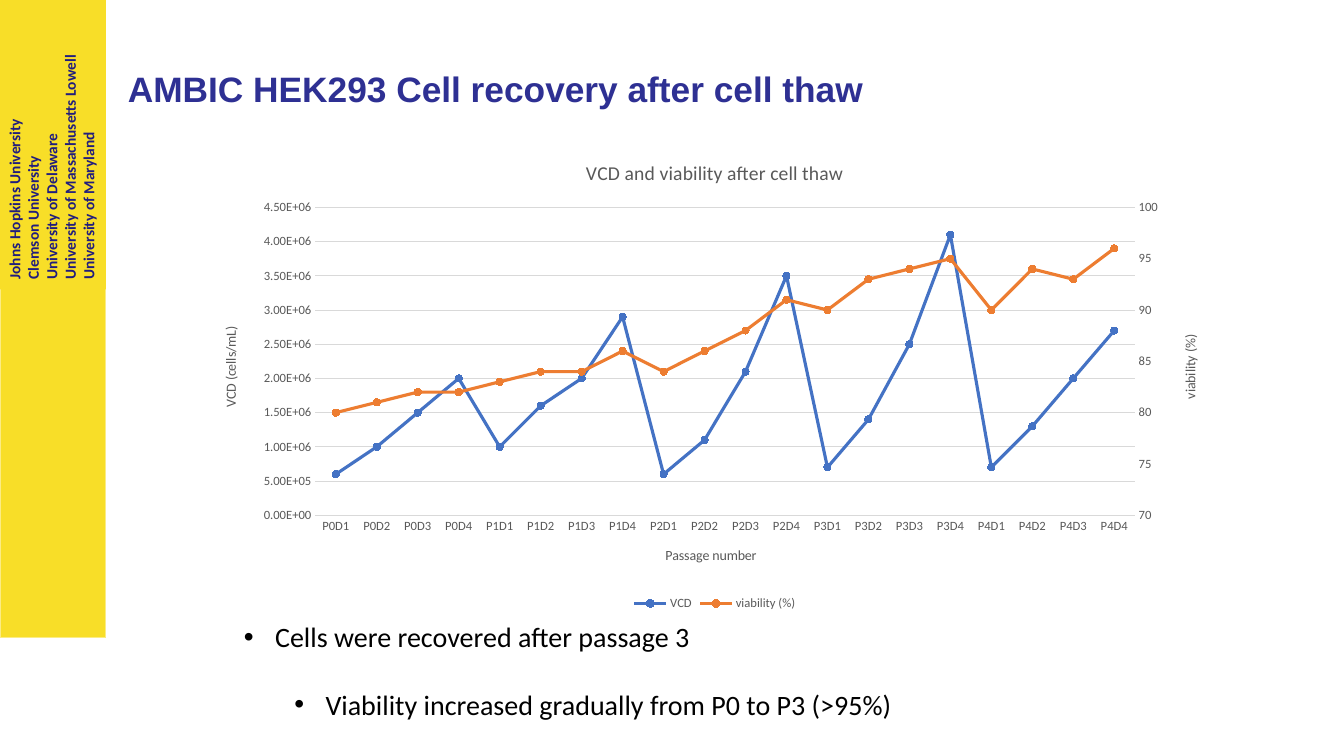
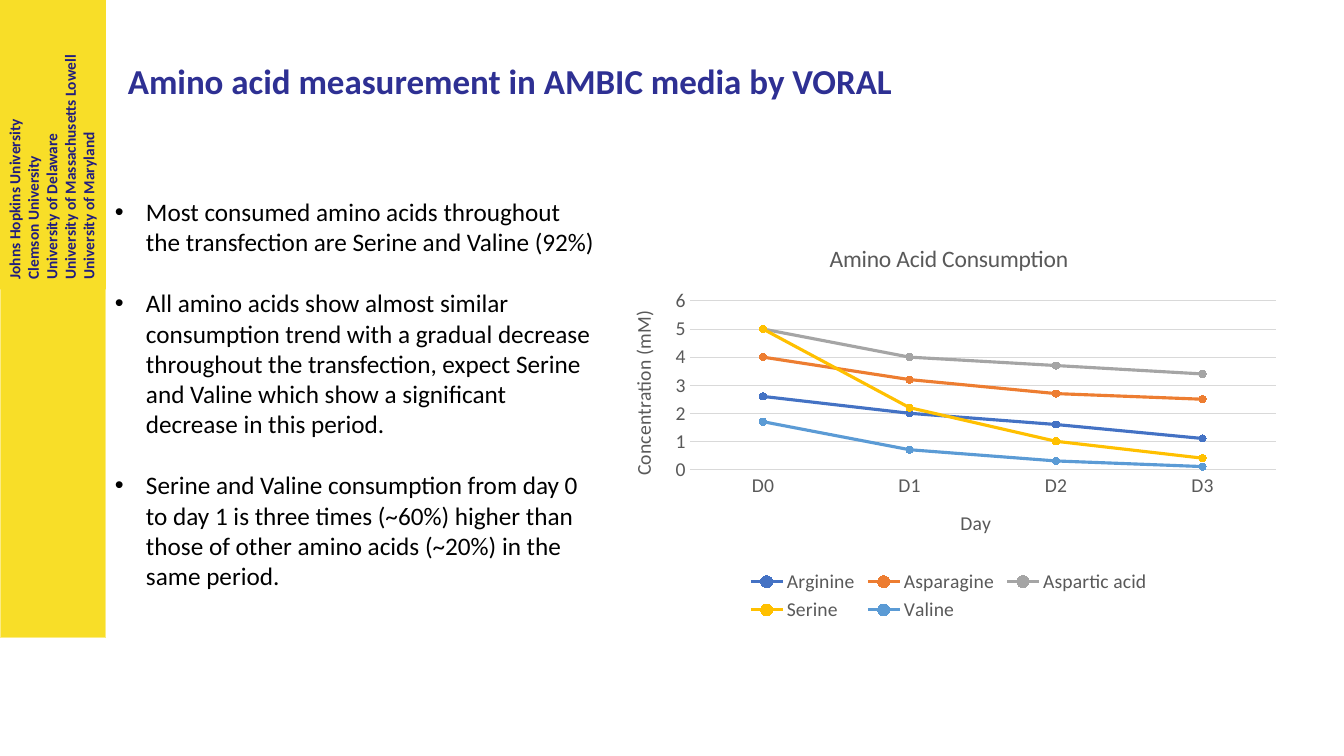
"""Build two slides on cell recovery and amino acid consumption."""
from copy import deepcopy

from lxml import etree
from pptx import Presentation
from pptx.chart import axis as chart_axis
from pptx.chart import data as chart_data
from pptx.dml.color import RGBColor
from pptx.enum import chart as charts, shapes, text
from pptx.oxml import ns
from pptx.util import Inches, Pt

YELLOW, YELLOW_EDGE, NAVY, TITLE_BLUE = "F8DE28", "FBEC85", "211D7D", "2E3093"
BLACK, GREY, GRID = "000000", "595959", "D9D9D9"
SERIES_COLORS = ["4472C4", "ED7D31", "A5A5A5", "FFC000", "5B9BD5"]
BODY_FONT = "Calibri"
BULLET_HANG = 0.31

UNIVERSITIES = [
    "Johns Hopkins University",
    "Clemson University",
    "University of Delaware",
    "University of Massachusetts Lowell",
    "University of Maryland",
]

SLIDES = [
    {
        "title": ("AMBIC HEK293 Cell recovery after cell thaw", "Arial", 25.2, 0.44),
        "body": {
            "at": (2.32, 6.1, 11.01, 1.35), "size": 20, "gap": 24,
            "points": [
                (0.31, "Cells were recovered after passage 3"),
                (0.81, "Viability increased gradually from P0 to P3 (>95%)"),
            ],
        },
        "chart": {
            "at": (2.01, 1.4, 10.16, 4.7),
            "title": "VCD and viability after cell thaw",
            "sizes": {"title": 14, "axis": 10, "label": 9},
            "plot": (0.11, 0.14, 0.8, 0.65),
            "categories": [f"P{passage}D{day}" for passage in range(5) for day in range(1, 5)],
            "x_title": "Passage number",
            "left": ("VCD (cells/mL)", 0, 4500000, 500000, "0.00E+00"),
            "right": ("viability (%)", 70, 100, 5, "General"),
            "series": {
                "VCD": [600000, 1000000, 1500000, 2000000, 1000000, 1600000, 2000000,
                        2900000, 600000, 1100000, 2100000, 3500000, 700000, 1400000,
                        2500000, 4100000, 700000, 1300000, 2000000, 2700000],
                "viability (%)": [80, 81, 82, 82, 83, 84, 84, 86, 84, 86,
                                  88, 91, 90, 93, 94, 95, 90, 94, 93, 96],
            },
        },
    },
    {
        "title": ("Amino acid measurement in AMBIC media by VORAL", BODY_FONT, 25, 0.36),
        "body": {
            "at": (0.54, 1.9, 5.5, 4.2), "size": 18, "gap": 22,
            "points": [
                (0.81, "Most consumed amino acids throughout the transfection are "
                       "Serine and Valine (92%)"),
                (0.81, "All amino acids show almost similar consumption trend with a "
                       "gradual decrease throughout the transfection, expect Serine and "
                       "Valine which show a significant decrease in this period."),
                (0.81, "Serine and Valine consumption from day 0 to day 1 is three times "
                       "(~60%) higher than those of other amino acids (~20%) in the "
                       "same period."),
            ],
        },
        "chart": {
            "at": (6.03, 2.23, 6.76, 3.98),
            "title": "Amino Acid Consumption",
            "sizes": {"title": 16.8, "axis": 14, "label": 14},
            "plot": (0.12, 0.19, 0.86, 0.42),
            "legend": (0.2, 0.85, 0.6, 0.15),
            "categories": ["D0", "D1", "D2", "D3"],
            "x_title": "Day",
            "left": ("Concentration (mM)", 0, 6, 1, "General"),
            "series": {
                "Arginine": [2.6, 2, 1.6, 1.1],
                "Asparagine": [4, 3.2, 2.7, 2.5],
                "Aspartic acid": [5, 4, 3.7, 3.4],
                "Serine": [5, 2.2, 1, 0.4],
                "Valine": [1.7, 0.7, 0.3, 0.1],
            },
        },
    },
]


def color(value):
    return RGBColor.from_string(value)


def apply(target, **values):
    for name, value in values.items():
        setattr(target, name, value)


def style_font(font, size, fill, name=BODY_FONT, bold=False):
    apply(font, size=Pt(size), name=name, bold=bold)
    font.color.rgb = color(fill)


def add_band(page, at, edge=None):
    band = page.shapes.add_shape(shapes.MSO_SHAPE.RECTANGLE, *map(Inches, at))
    band.shadow.inherit = False
    band.fill.solid()
    band.fill.fore_color.rgb = color(YELLOW)
    if edge:
        band.line.color.rgb = color(edge)
        band.line.width = Pt(0.75)
    else:
        band.line.fill.background()
    return band


def add_side_band(page):
    add_band(page, (0, 0, 1.05, 6.33), YELLOW_EDGE)
    partners = add_band(page, (-0.91, 0.91, 2.87, 1.05))
    partners.rotation = 270
    frame = partners.text_frame
    apply(frame, text="\n".join(UNIVERSITIES), word_wrap=True,
          vertical_anchor=text.MSO_ANCHOR.TOP)
    for para in frame.paragraphs:
        para.alignment = text.PP_ALIGN.LEFT
        style_font(para.font, 11, NAVY, bold=True)


def add_title(page, words, name, size, top):
    box = page.shapes.add_textbox(*map(Inches, (1.17, top, 11.5, 0.93)))
    apply(box.text_frame, text=words, word_wrap=True, vertical_anchor=text.MSO_ANCHOR.MIDDLE)
    para = box.text_frame.paragraphs[0]
    para.line_spacing = 0.9
    style_font(para.font, size, TITLE_BLUE, name, True)


def add_body(page, at, size, gap, points):
    frame = page.shapes.add_textbox(*map(Inches, at)).text_frame
    apply(frame, text="\n".join(words for _, words in points), word_wrap=True)
    for index, (para, (indent, _)) in enumerate(zip(frame.paragraphs, points)):
        properties = para._p.get_or_add_pPr()
        properties.set("marL", str(Inches(indent)))
        properties.set("indent", str(-Inches(BULLET_HANG)))
        etree.SubElement(properties, ns.qn("a:buFont"), typeface="Arial")
        etree.SubElement(properties, ns.qn("a:buChar"), char="•")
        if index:
            para.space_before = Pt(gap)
        style_font(para.font, size, BLACK)


def make_layout(place, inner=False):
    layout = etree.Element(ns.qn("c:layout"))
    manual = etree.SubElement(layout, ns.qn("c:manualLayout"))
    settings = [("layoutTarget", "inner")] if inner else []
    settings += [("xMode", "edge"), ("yMode", "edge"), *zip("xywh", place)]
    for tag, value in settings:
        etree.SubElement(manual, ns.qn(f"c:{tag}"), val=str(value))
    return layout


def style_axis(axis, title, sizes):
    apply(axis, has_title=True, major_tick_mark=charts.XL_TICK_MARK.NONE,
          minor_tick_mark=charts.XL_TICK_MARK.NONE)
    frame = axis.axis_title.text_frame
    frame.text = title
    style_font(frame.paragraphs[0].font, sizes["axis"], GREY)
    style_font(axis.tick_labels.font, sizes["label"], GREY)


def style_value_axis(axis, sizes, title, low, high, step, number_format):
    style_axis(axis, title, sizes)
    apply(axis, minimum_scale=low, maximum_scale=high, major_unit=step)
    apply(axis.tick_labels, number_format=number_format, number_format_is_linked=False)
    axis.format.line.fill.background()


def add_right_axis(chart, sizes, settings):
    left_plot = chart.plots[0]._element
    category, value = chart.category_axis._element, chart.value_axis._element
    right_plot, right_category, right_value = map(deepcopy, (left_plot, category, value))
    left_plot.remove(left_plot.findall(ns.qn("c:ser"))[-1])
    right_plot.remove(right_plot.find(ns.qn("c:ser")))
    left_plot.addnext(right_plot)
    value.addnext(right_value)
    right_value.addnext(right_category)

    ids = ("50010", "50020")
    for element, own, cross in ((right_category, *ids), (right_value, *reversed(ids))):
        element.find(ns.qn("c:axId")).set("val", own)
        element.find(ns.qn("c:crossAx")).set("val", cross)
    for element, new_id in zip(right_plot.findall(ns.qn("c:axId")), ids):
        element.set("val", new_id)
    right_category.remove(right_category.find(ns.qn("c:title")))
    right_category.find(ns.qn("c:delete")).set("val", "1")
    right_value.find(ns.qn("c:axPos")).set("val", "r")
    right_value.find(ns.qn("c:crosses")).set("val", "max")
    axis = chart_axis.ValueAxis(right_value)
    axis.has_major_gridlines = False
    style_value_axis(axis, sizes, *settings)


def add_line_chart(page, details):
    sizes = details["sizes"]
    data = chart_data.CategoryChartData()
    data.categories = details["categories"]
    for name, values in details["series"].items():
        data.add_series(name, values)
    chart = page.shapes.add_chart(charts.XL_CHART_TYPE.LINE_MARKERS,
                                  *map(Inches, details["at"]), data).chart
    style_font(chart.font, sizes["label"], GREY)
    apply(chart, has_title=True, has_legend=True)
    frame = chart.chart_title.text_frame
    frame.text = details["title"]
    style_font(frame.paragraphs[0].font, sizes["title"], GREY)
    apply(chart.legend, position=charts.XL_LEGEND_POSITION.BOTTOM, include_in_layout=False)
    style_font(chart.legend.font, sizes["label"], GREY)

    chart.plots[0].vary_by_categories = False
    for series, fill in zip(chart.plots[0].series, SERIES_COLORS):
        series.smooth = False
        series.format.line.color.rgb = color(fill)
        series.format.line.width = Pt(2.25)
        apply(series.marker, style=charts.XL_MARKER_STYLE.CIRCLE, size=5)
        series.marker.format.fill.solid()
        series.marker.format.fill.fore_color.rgb = color(fill)
        series.marker.format.line.color.rgb = color(fill)

    style_axis(chart.category_axis, details["x_title"], sizes)
    style_value_axis(chart.value_axis, sizes, *details["left"])
    chart.value_axis.has_major_gridlines = True
    for line in (chart.category_axis.format.line, chart.value_axis.major_gridlines.format.line):
        line.color.rgb = color(GRID)
        line.width = Pt(0.75)
    if "right" in details:
        add_right_axis(chart, sizes, details["right"])

    plot_area = chart._chartSpace.chart.plotArea
    for old in plot_area.findall(ns.qn("c:layout")):
        plot_area.remove(old)
    plot_area.insert(0, make_layout(details["plot"], inner=True))
    if "legend" in details:
        legend = chart.legend._element
        for old in legend.findall(ns.qn("c:layout")):
            legend.remove(old)
        legend.find(ns.qn("c:legendPos")).addnext(make_layout(details["legend"]))


def main():
    deck = Presentation()
    apply(deck, slide_width=Inches(13.33), slide_height=Inches(7.5))
    for content in SLIDES:
        page = deck.slides.add_slide(deck.slide_layouts[6])
        add_side_band(page)
        add_title(page, *content["title"])
        add_line_chart(page, content["chart"])
        add_body(page, **content["body"])
    deck.save("out.pptx")


if __name__ == "__main__":
    main()
